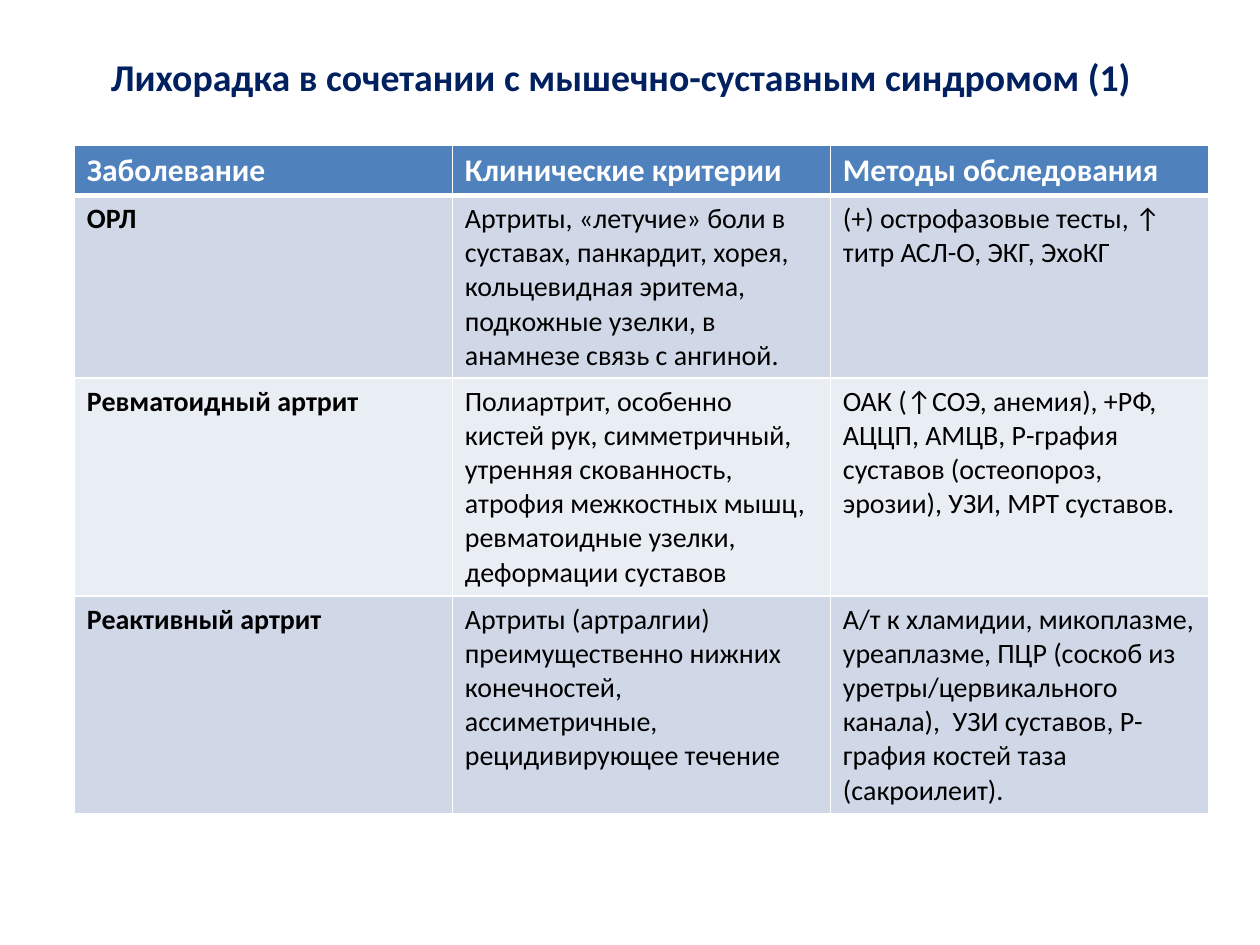
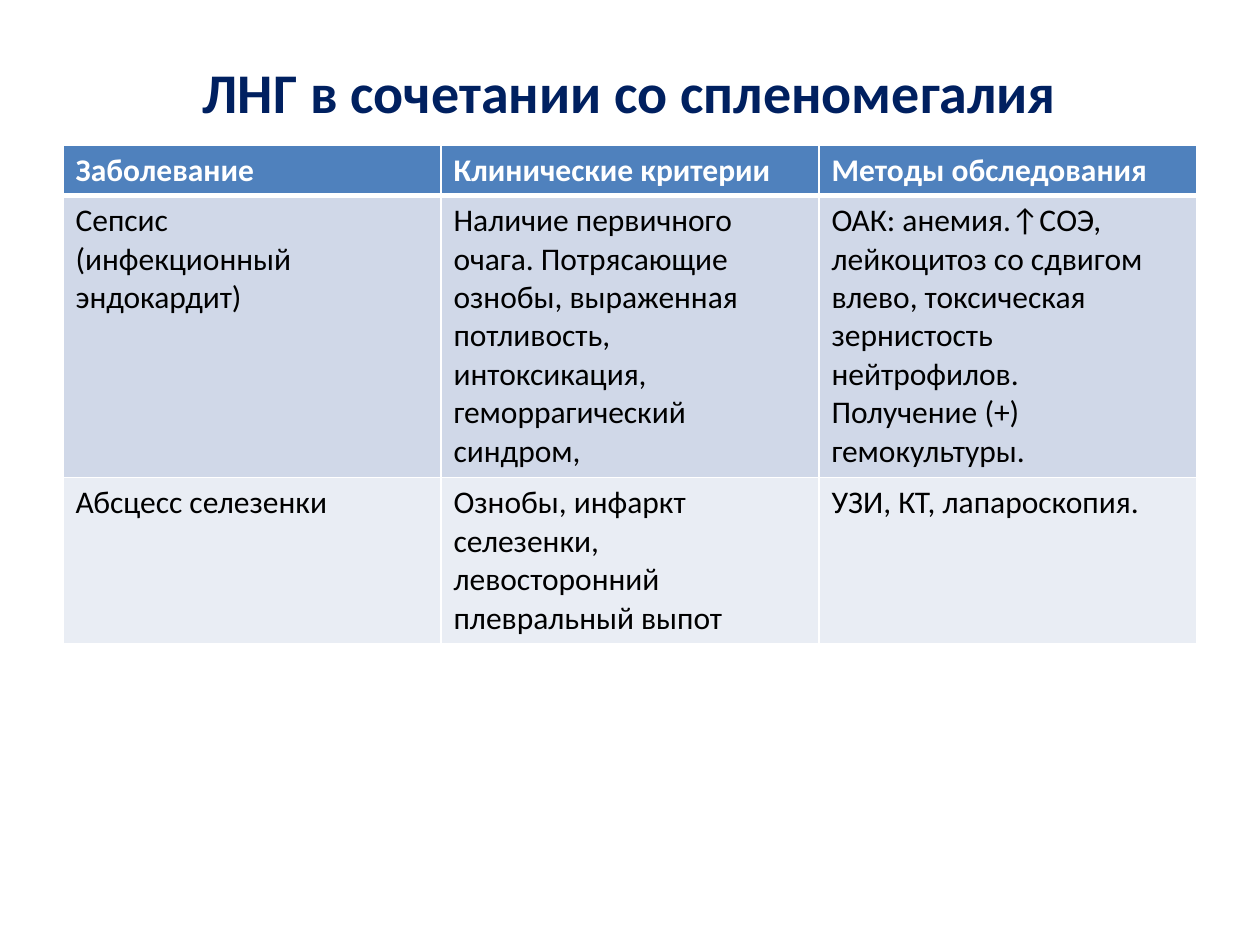
from dataclasses import dataclass

import pptx
import pptx.dml.color
import pptx.enum.text
import pptx.oxml
import pptx.oxml.ns
import pptx.util
from pptx.dml.color import RGBColor
from pptx.util import Inches

NAVY = RGBColor(0x00, 0x20, 0x60)
HEADER_BLUE = RGBColor(0x4F, 0x81, 0xBD)
BAND_DARK = RGBColor(0xD0, 0xD8, 0xE8)
BAND_LIGHT = RGBColor(0xE9, 0xED, 0xF4)
WHITE = RGBColor(0xFF, 0xFF, 0xFF)
BLACK = RGBColor(0x00, 0x00, 0x00)
FONT = "Calibri"
HEADERS = ("Заболевание", "Клинические критерии", "Методы обследования")
HEADER_SIZE = 18
HEADER_HEIGHT = 0.4
TABLE_TOP = 1.15
COLUMN_WIDTH = 3


@dataclass(frozen=True)
class Title:
    text: str
    size: float
    left: float
    top: float
    height: float


@dataclass(frozen=True)
class Disease:
    name: str
    criteria: str
    methods: str
    height: float


@dataclass(frozen=True)
class DiseaseSlide:
    title: Title
    table_left: float
    body_size: float
    bold_names: bool
    diseases: tuple[Disease, ...]


SLIDES = (
    DiseaseSlide(
        Title("Лихорадка в сочетании с мышечно-суставным синдромом (1)", 21.6, 0.43, 0.21, 0.79),
        table_left=0.59,
        body_size=16,
        bold_names=True,
        diseases=(
            Disease(
                "ОРЛ",
                "Артриты, «летучие» боли в суставах, панкардит, хорея, кольцевидная эритема, "
                "подкожные узелки, в анамнезе связь с ангиной.",
                "(+) острофазовые тесты, ↑ титр АСЛ-О, ЭКГ, ЭхоКГ",
                1.45,
            ),
            Disease(
                "Ревматоидный артрит",
                "Полиартрит, особенно кистей рук, симметричный, утренняя скованность, "
                "атрофия межкостных мышц, ревматоидные узелки, деформации суставов",
                "ОАК (↑СОЭ, анемия), +РФ, АЦЦП, АМЦВ, Р-графия суставов "
                "(остеопороз, эрозии), УЗИ, МРТ суставов.",
                1.73,
            ),
            Disease(
                "Реактивный артрит",
                "Артриты (артралгии) преимущественно нижних конечностей, ассиметричные, "
                "рецидивирующее течение",
                "А/т к хламидии, микоплазме, уреаплазме, ПЦР (соскоб из "
                "уретры/цервикального канала),  УЗИ суставов, Р-графия костей таза (сакроилеит).",
                1.73,
            ),
        ),
    ),
    DiseaseSlide(
        Title("ЛНГ в сочетании со спленомегалия", 32, 0.5, 0.3, 0.85),
        table_left=0.5,
        body_size=18,
        bold_names=False,
        diseases=(
            Disease(
                "Сепсис\n(инфекционный эндокардит)",
                "Наличие первичного очага. Потрясающие ознобы, выраженная потливость, "
                "интоксикация, геморрагический синдром,",
                "ОАК: анемия.↑СОЭ, лейкоцитоз со сдвигом влево, токсическая зернистость "
                "нейтрофилов.\nПолучение (+) гемокультуры.",
                2.24,
            ),
            Disease(
                "Абсцесс селезенки",
                "Ознобы, инфаркт селезенки, левосторонний плевральный выпот",
                "УЗИ, КТ, лапароскопия.",
                1.32,
            ),
        ),
    ),
)


def format_text(tf, size: float, color: RGBColor, bold: bool) -> None:
    for p in tf.paragraphs:
        for r in p.runs:
            r.font.name = FONT
            r.font.size = pptx.util.Pt(size)
            r.font.color.rgb = color
            r.font.bold = bold


def add_title(s, title: Title) -> None:
    sp = s.shapes.add_textbox(
        Inches(title.left), Inches(title.top), Inches(len(HEADERS) * COLUMN_WIDTH), Inches(title.height)
    )
    tf = sp.text_frame
    tf.word_wrap = True
    tf.vertical_anchor = pptx.enum.text.MSO_ANCHOR.MIDDLE
    tf.text = title.text
    tf.paragraphs[0].alignment = pptx.enum.text.PP_ALIGN.CENTER
    format_text(tf, title.size, NAVY, True)


def add_borders(cell, top: int, bottom: int) -> None:
    tc_pr = cell._tc.get_or_add_tcPr()
    for side, width in (("L", 1), ("R", 1), ("T", top), ("B", bottom)):
        tc_pr.append(pptx.oxml.parse_xml(
            f'<a:ln{side} {pptx.oxml.ns.nsdecls("a")} w="{pptx.util.Pt(width)}">'
            f'<a:solidFill><a:srgbClr val="{WHITE}"/></a:solidFill></a:ln{side}>'
        ))


def add_disease_table(s, content: DiseaseSlide) -> None:
    rows = [HEADERS] + [(d.name, d.criteria, d.methods) for d in content.diseases]
    heights = [HEADER_HEIGHT] + [d.height for d in content.diseases]
    table = s.shapes.add_table(
        len(rows), len(HEADERS), Inches(content.table_left), Inches(TABLE_TOP),
        Inches(len(HEADERS) * COLUMN_WIDTH), Inches(sum(heights)),
    ).table
    for column in table.columns:
        column.width = Inches(COLUMN_WIDTH)
    for i, (texts, height) in enumerate(zip(rows, heights)):
        table.rows[i].height = Inches(height)
        is_header = i == 0
        band = HEADER_BLUE if is_header else BAND_DARK if i % 2 else BAND_LIGHT
        for j, text in enumerate(texts):
            cell = table.cell(i, j)
            add_borders(cell, top=3 if i == 1 else 1, bottom=3 if is_header else 1)
            cell.fill.solid()
            cell.fill.fore_color.rgb = band
            cell.text_frame.text = text
            format_text(
                cell.text_frame,
                HEADER_SIZE if is_header else content.body_size,
                WHITE if is_header else BLACK,
                is_header or (content.bold_names and j == 0),
            )


def main() -> None:
    prs = pptx.Presentation()
    prs.slide_width = Inches(10)
    prs.slide_height = Inches(7.5)
    for content in SLIDES:
        s = prs.slides.add_slide(prs.slide_layouts[6])
        add_title(s, content.title)
        add_disease_table(s, content)
    prs.save("out.pptx")


if __name__ == "__main__":
    main()
